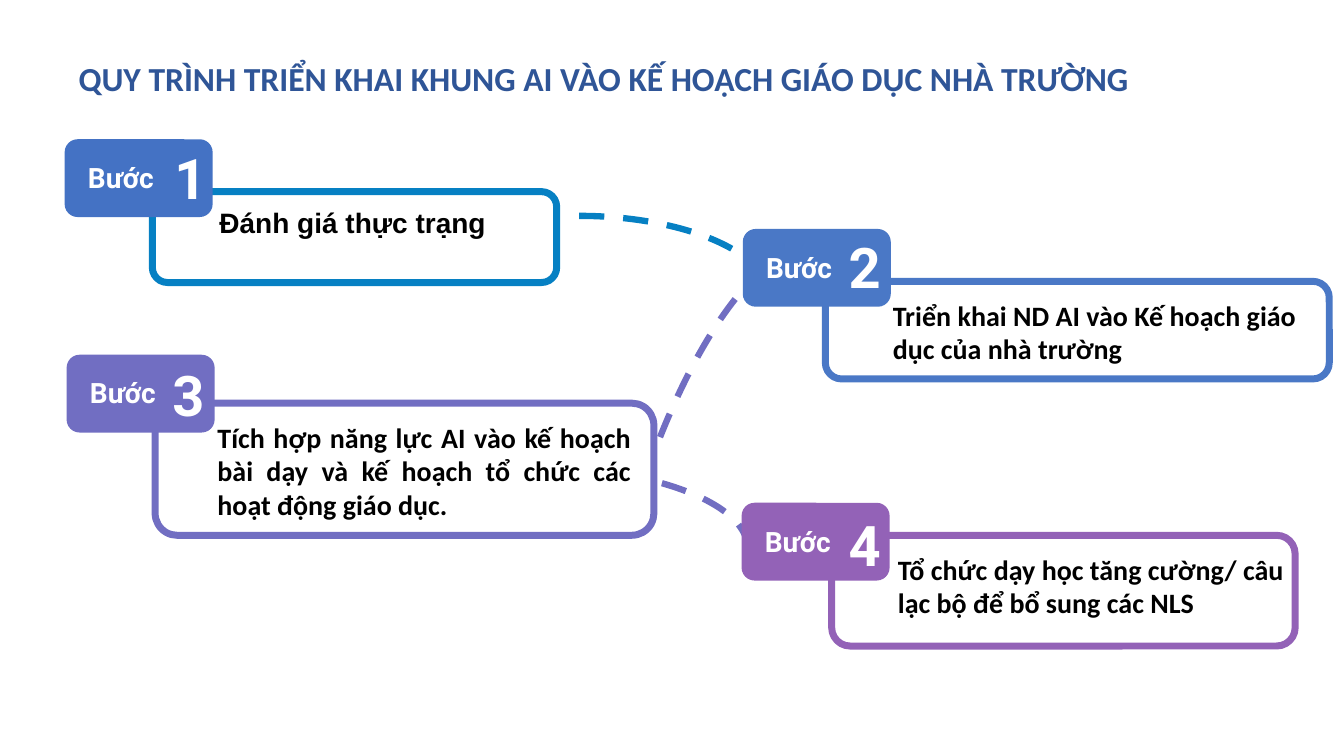
from pptx import Presentation
from pptx.dml.color import RGBColor
from pptx.enum.dml import MSO_LINE
from pptx.enum.shapes import MSO_SHAPE
from pptx.enum.text import MSO_ANCHOR, PP_ALIGN
from pptx.util import Cm, Pt

COLORS = {
    "title": "2F5597", "text": "000000", "white": "FFFFFF",
    "cyan": "0680C3", "royal": "4472C4", "blue": "4A78C6",
    "indigo": "716EC2", "purple": "9362B7",
}

presentation = Presentation()
presentation.slide_width = Cm(33.87)
presentation.slide_height = Cm(19.05)
slide = presentation.slides.add_slide(presentation.slide_layouts[6])


def add_outline(kind, box, fill=None, line=None, width=5):
    shape = slide.shapes.add_shape(kind, *map(Cm, box))
    shape.shadow.inherit = False
    if fill:
        shape.fill.solid()
        shape.fill.fore_color.rgb = RGBColor.from_string(COLORS[fill])
    else:
        shape.fill.background()
    if line:
        shape.line.color.rgb = RGBColor.from_string(COLORS[line])
        shape.line.width = Pt(width)
    else:
        shape.line.fill.background()
    return shape


def add_text(text, box, size, font="Calibri", color="text", align=PP_ALIGN.LEFT, wrap=True):
    text_frame = slide.shapes.add_textbox(*map(Cm, box)).text_frame
    text_frame.word_wrap = wrap
    paragraph = text_frame.paragraphs[0]
    paragraph.alignment = align
    run = paragraph.add_run()
    run.text = text
    for name, value in {"name": font, "size": Pt(size), "bold": True}.items():
        setattr(run.font, name, value)
    run.font.color.rgb = RGBColor.from_string(COLORS[color])
    return text_frame


arcs = [
    ((7.92, 11.76, 10.92, 4.09), 0, "indigo"),
    ((11.56, 10.74, 13.06, 3.89), 288.8, "indigo"),
    ((9.73, 5.44, 9.73, 4.27), 0, "cyan"),
]
for box, rotation, color in arcs:
    arc = add_outline(MSO_SHAPE.ARC, box, line=color, width=4.5)
    arc.rotation = rotation
    arc.line.dash_style = MSO_LINE.DASH

title = add_text("QUY TRÌNH TRIỂN KHAI KHUNG AI VÀO KẾ HOẠCH GIÁO DỤC NHÀ TRƯỜNG",
                 (1.73, 0.18, 31.75, 3.68), 24, color="title")
title.vertical_anchor = MSO_ANCHOR.MIDDLE
title.paragraphs[0].line_spacing = 0.9

steps = [
    {"text": "Đánh giá thực trạng", "font": "Arial", "align": PP_ALIGN.LEFT,
     "frame": (3.84, 4.83, 10.19, 2.29), "body": (5.28, 5.05, 8.69, 1.12),
     "badge": (1.63, 3.51), "number": (4.14, 3.48), "line": "cyan", "fill": "royal"},
    {"text": "Triển khai ND AI vào Kế hoạch giáo dục của nhà trường",
     "font": "Calibri", "align": PP_ALIGN.LEFT,
     "frame": (20.8, 7.09, 12.7, 2.46), "body": (22.25, 7.39, 11.61, 1.96),
     "badge": (18.72, 5.77), "number": (21.13, 5.74), "line": "blue", "fill": "blue"},
    {"text": "Tích hợp năng lực AI vào kế hoạch bài dạy và kế hoạch "
             "tổ chức các hoạt động giáo dục.",
     "font": "Calibri", "align": PP_ALIGN.JUSTIFY,
     "frame": (3.91, 10.16, 12.57, 3.33), "body": (5.23, 10.46, 10.92, 3.68),
     "badge": (1.68, 8.94), "number": (4.09, 8.97), "line": "indigo", "fill": "indigo"},
    {"text": "Tổ chức dạy học tăng cường/ câu lạc bộ để bổ sung các NLS",
     "font": "Calibri", "align": PP_ALIGN.LEFT,
     "frame": (20.96, 13.49, 11.68, 2.79), "body": (22.38, 13.79, 10.59, 2.82),
     "badge": (18.69, 12.67), "number": (21.13, 12.73), "line": "purple", "fill": "purple"},
]
for number, step in enumerate(steps, 1):
    left, top = step["badge"]
    add_outline(MSO_SHAPE.ROUNDED_RECTANGLE, step["frame"], "white", step["line"])
    add_outline(MSO_SHAPE.ROUNDED_RECTANGLE, (left, top, 3.73, 1.96), step["fill"])
    add_text(step["text"], step["body"], 20, step["font"], align=step["align"])
    add_text("Bước ", (left + 0.12, top + 0.41, 2.77, 1.12), 20, "Roboto", "white",
             PP_ALIGN.CENTER)
    add_text(str(number), (*step["number"], 1.32, 1.96), 40, "Roboto", "white",
             PP_ALIGN.CENTER, wrap=False)

presentation.save("out.pptx")
